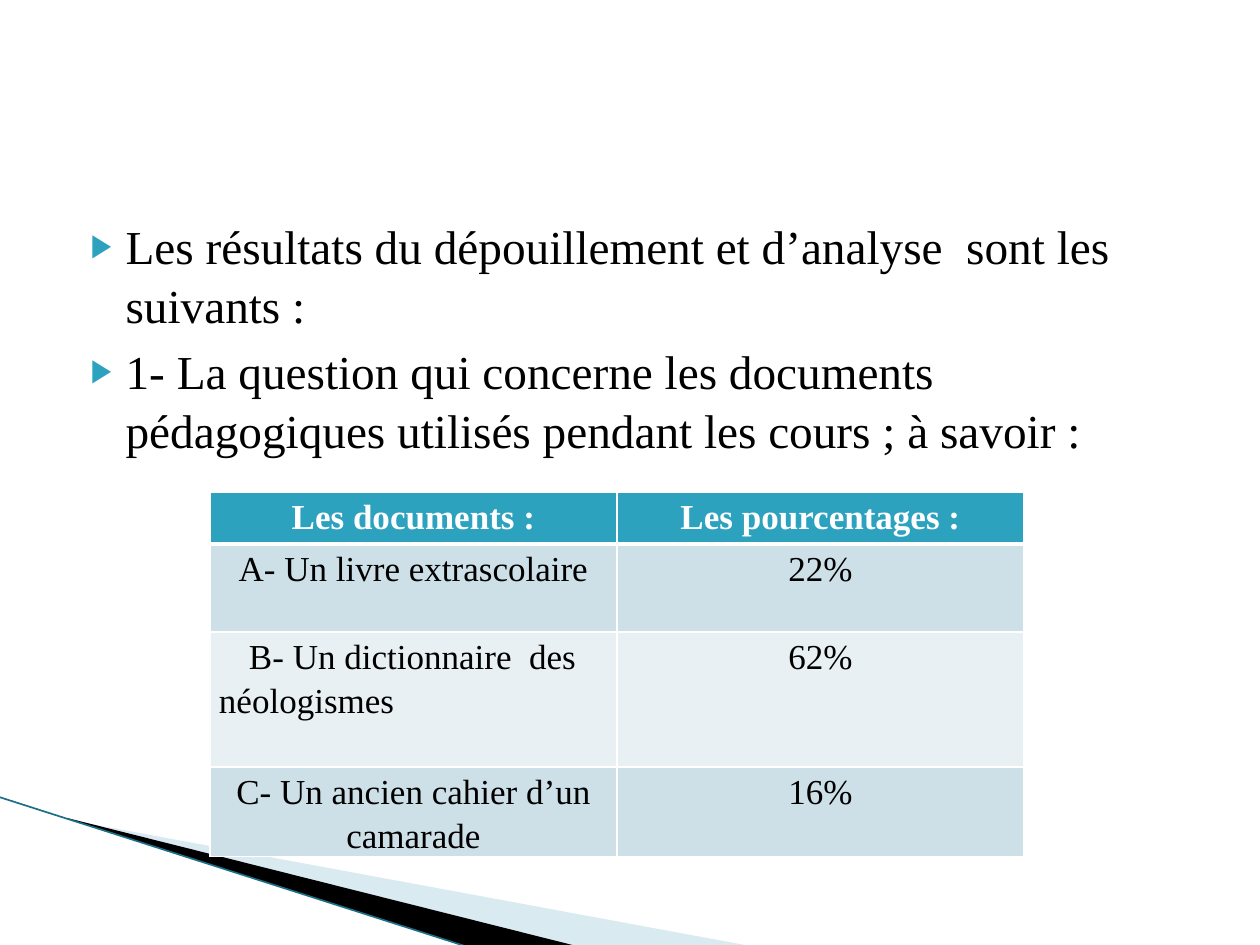
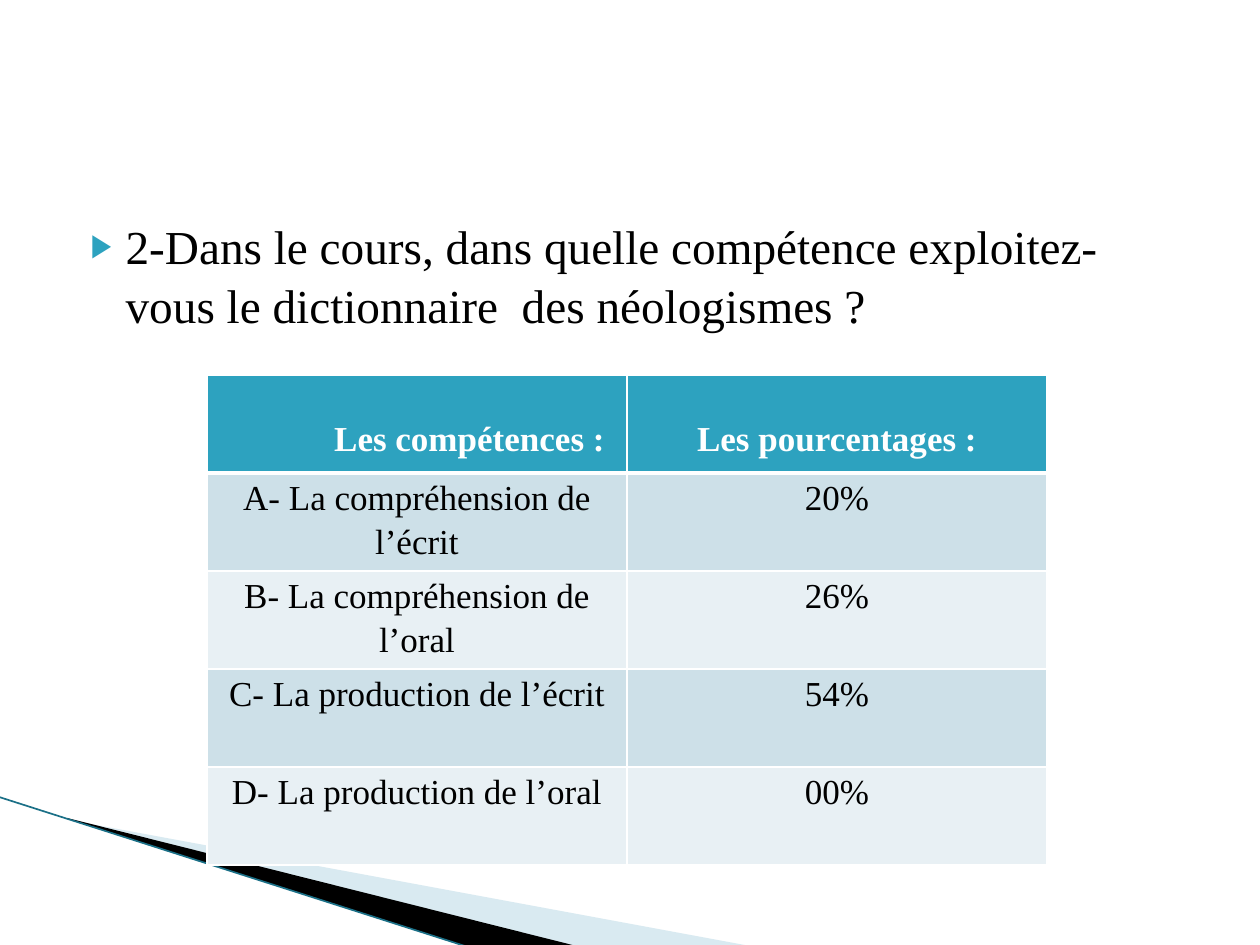
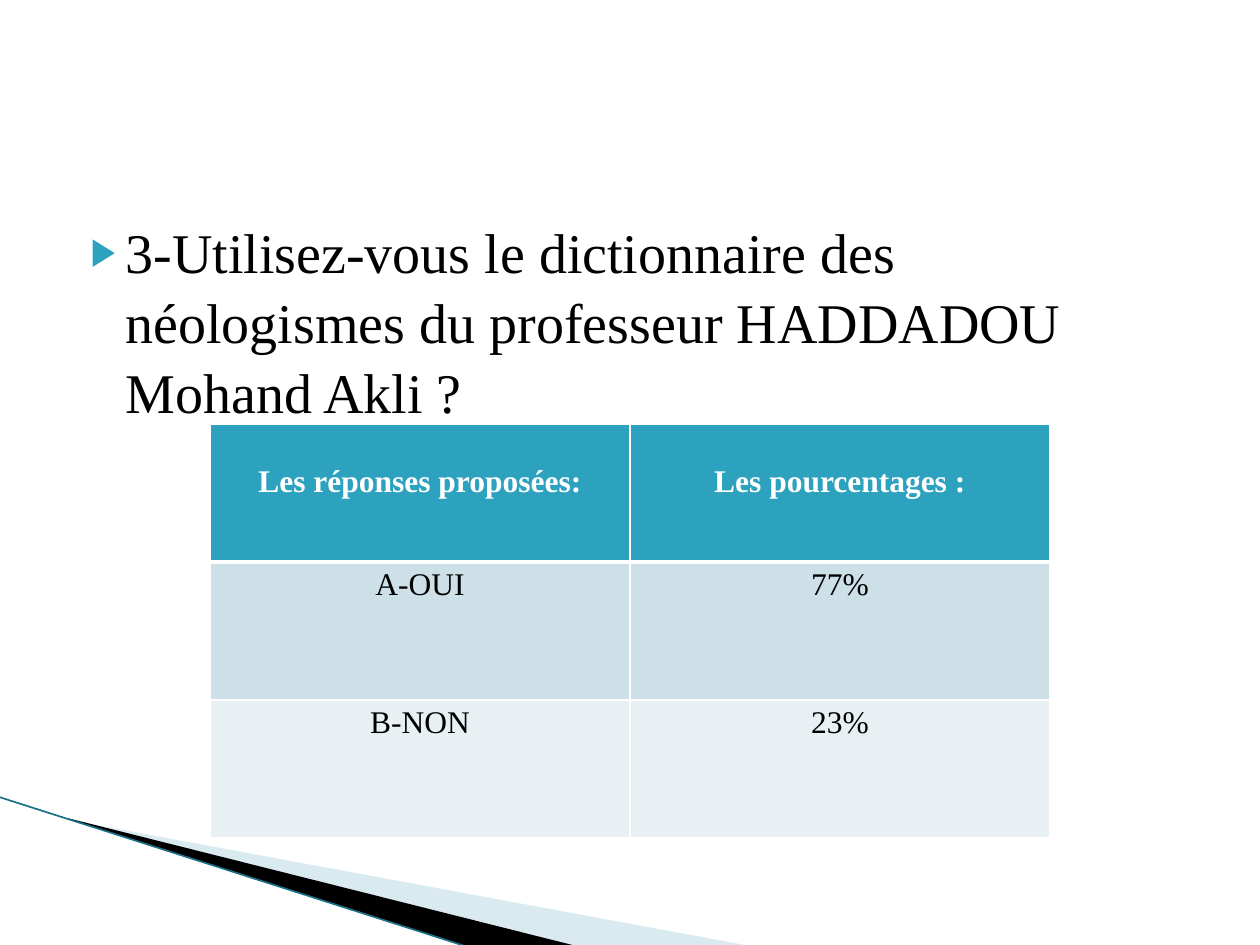
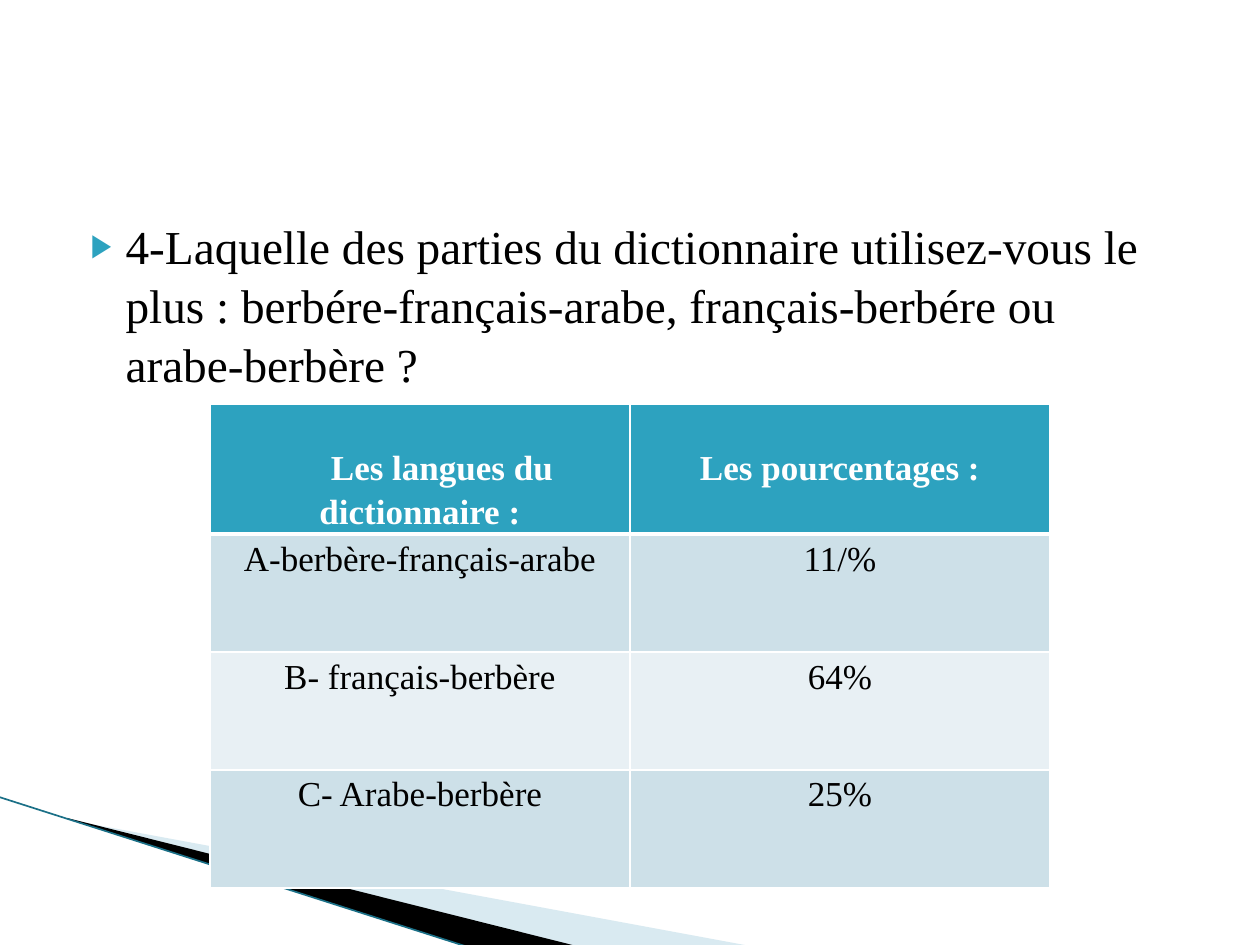
"""Build four slides of survey results: a question and its table of percentages on each."""
from lxml.etree import SubElement
from pptx import Presentation
from pptx.dml.color import RGBColor
from pptx.enum.shapes import MSO_CONNECTOR
from pptx.enum.text import MSO_AUTO_SIZE, PP_ALIGN
from pptx.oxml.ns import qn
from pptx.util import Emu, Pt

FONT = "Times New Roman"
COLORS = {
    "accent": "2DA2BF", "row_odd": "CDE0E8", "row_even": "E8F0F4", "white": "FFFFFF",
    "black": "000000", "wedge": "A0CBDC", "edge": "1B7087",
}
SLIDES = [
    {
        "text": ["Les résultats du dépouillement et d’analyse  sont les suivants\u00a0:",
                 "1- La question qui concerne les documents pédagogiques utilisés "
                 "pendant les cours\u00a0; à savoir\u00a0:"],
        "size": 27, "body_height": 624, "at": (210, 492), "col": 407,
        "heights": [52, 88, 135, 89], "cell_size": 20,
        "head_top": 6, "spacing": 1.0, "indents": {0: 0, 2: 30},
        "rows": [("Les documents\u00a0:", "Les pourcentages\u00a0:"),
                 ("A- Un livre extrascolaire", "22%"),
                 ("B- Un dictionnaire  des néologismes", "62%"),
                 ("C- Un ancien cahier d’un camarade", "16%")],
    },
    {
        "text": ["2-Dans le cours, dans quelle compétence exploitez-vous le "
                 "dictionnaire\u00a0 des néologismes ?"],
        "size": 27, "body_height": 624, "at": (207, 375), "col": 420,
        "heights": [98] * 5, "cell_size": 20,
        "head_top": 39, "spacing": 1.15, "indents": {0: 105},
        "rows": [("Les compétences\u00a0:", "Les pourcentages\u00a0:"),
                 ("A- La compréhension de l’écrit", "20%"),
                 ("B- La compréhension de l’oral", "26%"),
                 ("C- La production de l’écrit", "54%"),
                 ("D- La production de l’oral", "00%")],
    },
    {
        "text": ["3-Utilisez-vous le dictionnaire des néologismes du professeur "
                 "HADDADOU Mohand Akli\u00a0?"],
        "size": 32, "body_height": 624, "at": (210, 424), "col": 420,
        "heights": [138] * 3, "cell_size": 18,
        "head_top": 35, "spacing": 1.15, "indents": {0: 0},
        "rows": [("Les réponses\u00a0proposées:", "Les pourcentages\u00a0:"),
                 ("A-OUI", "77%"),
                 ("B-NON", "23%")],
    },
    {
        "text": ["4-Laquelle des parties du dictionnaire utilisez-vous le plus\u00a0: "
                 "berbére-français-arabe, français-berbére ou arabe-berbère\u00a0?"],
        "size": 27, "body_height": 712, "at": (210, 404), "col": 420,
        "heights": [130, 118, 118, 118], "cell_size": 20,
        "head_top": 39, "spacing": 1.15, "indents": {0: 44},
        "rows": [("Les langues du dictionnaire\u00a0:", "Les pourcentages\u00a0:"),
                 ("A-berbère-français-arabe", "11/%"),
                 ("B- français-berbère", "64%"),
                 ("C- Arabe-berbère", "25%")],
    },
]


def px(n):
    return Emu(round(n * 914400 / 126))


def style(font, size, color, bold=False):
    font.name, font.size, font.bold = FONT, Pt(size), bold
    font.color.rgb = RGBColor.from_string(COLORS[color])


prs = Presentation()
prs.slide_width, prs.slide_height = px(1260), px(945)
slides = [prs.slides.add_slide(prs.slide_layouts[1]) for _ in SLIDES]

decor = []
for color, points in [("wedge", [(69, 820), (750, 946), (575, 946), (69, 819)]),
                      ("black", [(67, 818), (576, 946), (469, 947), (68, 819)])]:
    points = [(px(x), px(y)) for x, y in points]
    builder = slides[0].shapes.build_freeform(*points[0], scale=1.0)
    builder.add_line_segments(points[1:], close=True)
    sp = builder.convert_to_shape()
    sp.shadow.inherit = False
    sp.fill.solid()
    sp.fill.fore_color.rgb = RGBColor.from_string(COLORS[color])
    sp.line.fill.background()
    decor.append(sp)
wedge_color = decor[0].element.spPr.find(".//" + qn("a:srgbClr"))
SubElement(wedge_color, qn("a:alpha")).set("val", "40000")
edge = slides[0].shapes.add_connector(MSO_CONNECTOR.STRAIGHT, px(-1), px(797), px(468), px(947))
edge.line.color.rgb = RGBColor.from_string(COLORS["edge"])
edge.line.width = Pt(0.95)
SubElement(edge.element.spPr, qn("a:effectLst"))
decor.append(edge)

master_tree = prs.slide_master.element.cSld.spTree
for i, sp in enumerate(decor):
    sp.element.find(".//" + qn("p:cNvPr")).set("id", str(101 + i))
    master_tree.insert(2 + i, sp.element)

for s, data in zip(slides, SLIDES):
    title = s.shapes.title.element
    title.getparent().remove(title)
    body = s.placeholders[1]
    body.left, body.top, body.width, body.height = px(63), px(204), px(1134), px(data["body_height"])
    tf = body.text_frame
    tf.text = "\n".join(data["text"])
    tf.auto_size = MSO_AUTO_SIZE.NONE
    tf.margin_top = px(11)
    for i, p in enumerate(tf.paragraphs):
        pPr = p._p.get_or_add_pPr()
        pPr.set("marL", str(px(50)))
        pPr.set("indent", str(px(-35)))
        bullet_color = SubElement(pPr, qn("a:buClr"))
        SubElement(bullet_color, qn("a:srgbClr")).set("val", COLORS["accent"])
        SubElement(pPr, qn("a:buSzPct")).set("val", "68000")
        SubElement(pPr, qn("a:buChar")).set("char", "▶")
        p.space_before = Pt(4 if i else 0)
        p.line_spacing = 1.04
        for r in p.runs:
            style(r.font, data["size"], "black")

    rows, heights = data["rows"], data["heights"]
    left, top = data["at"]
    table = s.shapes.add_table(len(rows), 2, px(left), px(top),
                               px(2 * data["col"]), px(sum(heights))).table
    for column in table.columns:
        column.width = px(data["col"])
    for i, (row, height) in enumerate(zip(rows, heights)):
        table.rows[i].height = px(height)
        head = i == 0
        for j, text in enumerate(row):
            cell = table.cell(i, j)
            cell.text = text
            cell.margin_left = cell.margin_right = px(9)
            cell.margin_top = px(data["head_top"] if head else 0)
            cell.margin_bottom = px(0)
            tcPr = cell._tc.get_or_add_tcPr()
            for side in "LRTB":
                thick = (head and side == "B") or (i == 1 and side == "T")
                ln = SubElement(tcPr, qn("a:ln" + side), w=str(Pt(3 if thick else 1)))
                line_fill = SubElement(ln, qn("a:solidFill"))
                SubElement(line_fill, qn("a:srgbClr")).set("val", COLORS["white"])
            fill = "accent" if head else "row_odd" if i % 2 else "row_even"
            cell.fill.solid()
            cell.fill.fore_color.rgb = RGBColor.from_string(COLORS[fill])
            p = cell.text_frame.paragraphs[0]
            p.alignment = PP_ALIGN.CENTER
            p.line_spacing = data["spacing"] if head else 1.15
            indent = data["indents"].get(i, 0) if j == 0 else 0
            if indent:
                p._p.get_or_add_pPr().set("indent", str(px(indent)))
                p.alignment = PP_ALIGN.CENTER if head else PP_ALIGN.LEFT
            style(p.runs[0].font, data["cell_size"], "white" if head else "black", head)

prs.save("out.pptx")
